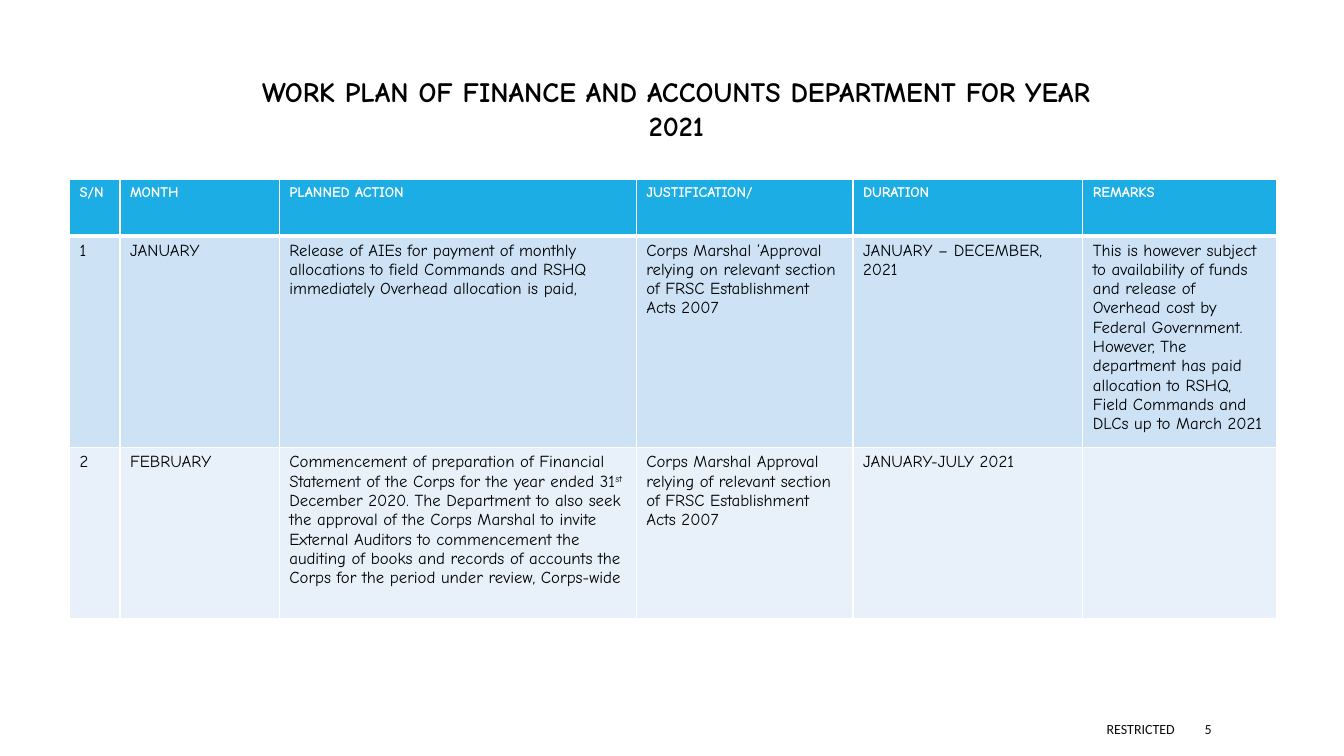
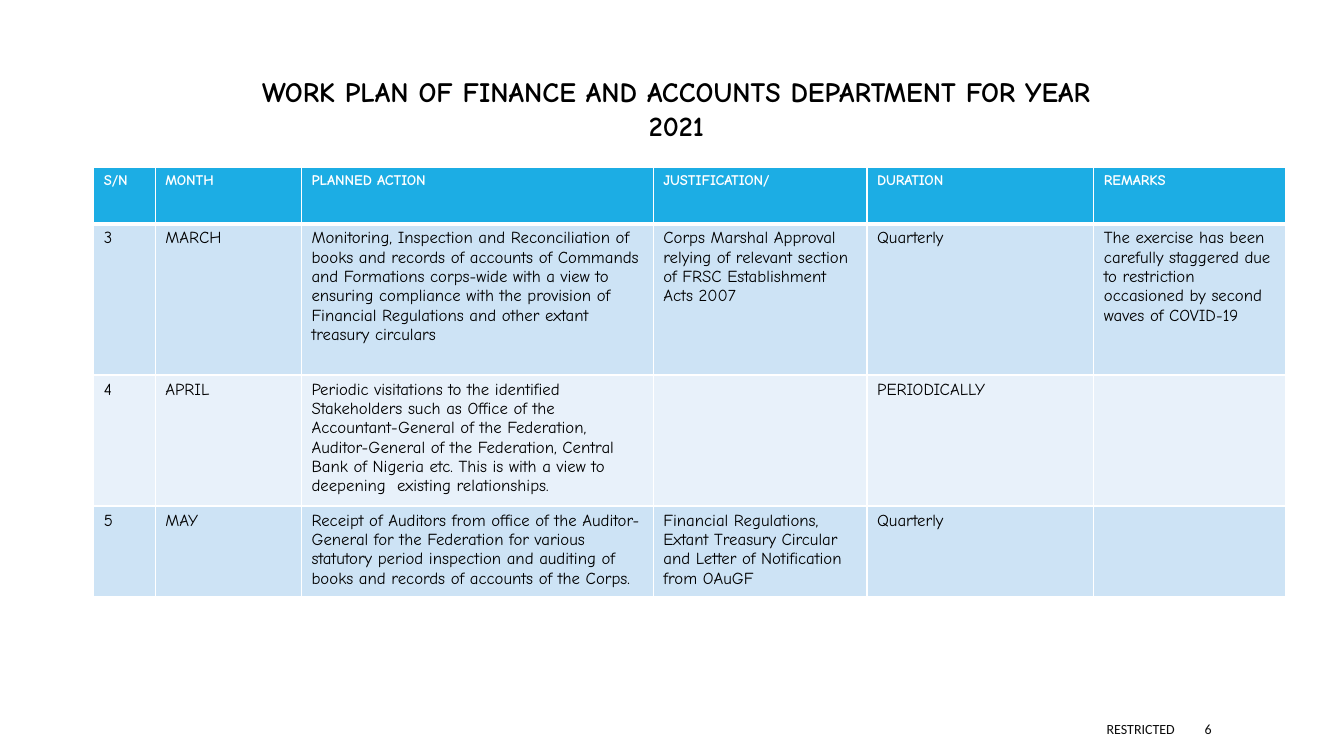
from lxml import etree
from pptx import Presentation
from pptx.dml.color import RGBColor
from pptx.enum import text as t
from pptx.oxml import ns
from pptx.util import Inches, Pt

BLACK = RGBColor(0x00, 0x00, 0x00)
WHITE = RGBColor(0xFF, 0xFF, 0xFF)
INK = RGBColor(0x0D, 0x0D, 0x0D)
BLUE = RGBColor(0x1C, 0xAD, 0xE4)
BANDS = [RGBColor(0xCD, 0xE3, 0xF5), RGBColor(0xE8, 0xF1, 0xFA)]

TITLE = "WORK PLAN OF FINANCE AND ACCOUNTS DEPARTMENT FOR YEAR 2021"
HEADS = ["S/N", "MONTH", "PLANNED ACTION", "JUSTIFICATION/", "DURATION", "REMARKS"]
BASIS = "Corps Marshal Approval relying of relevant section of FRSC Establishment Acts 2007"

PLANS = [
    {
        "page": "5",
        "at": (0.69, 1.78),
        "cols": [0.5, 1.58, 3.54, 2.15, 2.28, 1.92],
        "high": [0.56, 2.1, 1.7],
        "rows": [
            ["1", "JANUARY",
             "Release of AIEs for payment of monthly allocations to field Commands "
             "and RSHQ immediately Overhead allocation is paid,",
             "Corps Marshal ‘Approval relying on relevant section of FRSC "
             "Establishment Acts 2007",
             "JANUARY – DECEMBER, 2021",
             "This is however subject to availability of funds and release of "
             "Overhead cost by Federal Government. However, The department has paid "
             "allocation to RSHQ, Field Commands and DLCs up to March 2021"],
            ["2", "FEBRUARY",
             "Commencement of preparation of Financial Statement of the Corps for "
             "the year ended 31^st^ December 2020. The Department to also seek the "
             "approval of the Corps Marshal to invite External Auditors to "
             "commencement the auditing of books and records of accounts the Corps "
             "for the period under review, Corps-wide",
             BASIS, "JANUARY-JULY 2021", ""],
        ],
    },
    {
        "page": "6",
        "at": (0.93, 1.66),
        "cols": [0.61, 1.45, 3.49, 2.12, 2.25, 1.9],
        "high": [0.56, 1.5, 1.3, 0.9],
        "rows": [
            ["3", "MARCH",
             "Monitoring, Inspection and Reconciliation of books and records of "
             "accounts of Commands and Formations corps-wide with a view to ensuring "
             "compliance with the provision of Financial Regulations and other "
             "extant treasury circulars",
             BASIS, "Quarterly",
             "The exercise has been carefully staggered due to restriction "
             "occasioned by second waves of COVID-19"],
            ["4", "APRIL",
             "Periodic visitations to the identified Stakeholders such as Office of "
             "the Accountant-General of the Federation, Auditor-General of the "
             "Federation, Central Bank of Nigeria etc. This is with a view to "
             "deepening  existing relationships.",
             "", "PERIODICALLY", ""],
            ["5", "MAY",
             "Receipt of Auditors from office of the Auditor-General for the "
             "Federation for various statutory period inspection and auditing of "
             "books and records of accounts of the Corps.",
             "Financial Regulations, Extant Treasury Circular and Letter of "
             "Notification from OAuGF",
             "Quarterly", ""],
        ],
    },
]


def put(frame, words, size=12, color=BLACK, bold=False, font="Comic Neue",
        align=t.PP_ALIGN.LEFT, anchor=t.MSO_ANCHOR.TOP):
    """Fill a text frame; words between ^ marks are raised."""
    frame.word_wrap = True
    frame.vertical_anchor = anchor
    para = frame.paragraphs[0]
    para.alignment = align
    for i, part in enumerate(words.split("^") if words else []):
        run = para.add_run()
        run.text = part
        run.font.name = font
        run.font.size = Pt(size)
        run.font.bold = bold
        run.font.color.rgb = color
        if i % 2:
            run.font._rPr.set("baseline", "30000")


def edge(cell, **widths):
    """Draw white cell borders, widths in points by side."""
    props = cell._tc.get_or_add_tcPr()
    for side, width in widths.items():
        line = etree.SubElement(props, ns.qn("a:ln" + side), w=str(Pt(width)))
        fill = etree.SubElement(line, ns.qn("a:solidFill"))
        etree.SubElement(fill, ns.qn("a:srgbClr"), val=str(WHITE))


deck = Presentation()
deck.slide_width = Inches(13.33)
deck.slide_height = Inches(7.5)

for plan in PLANS:
    slide = deck.slides.add_slide(deck.slide_layouts[6])
    foot = {"size": 10, "color": INK, "font": "Calibri", "anchor": t.MSO_ANCHOR.MIDDLE}
    boxes = [
        ((2.28, 0.69, 8.86, 0.77), TITLE,
         {"size": 20, "bold": True, "align": t.PP_ALIGN.CENTER}),
        ((5.3, 7.08, 6.45, 0.3), "RESTRICTED", {**foot, "align": t.PP_ALIGN.RIGHT}),
        ((11.85, 7.08, 1.06, 0.3), plan["page"], foot),
    ]
    for place, words, style in boxes:
        box = slide.shapes.add_textbox(*map(Inches, place))
        put(box.text_frame, words, **style)

    rows = [HEADS] + plan["rows"]
    size = sum(plan["cols"]), sum(plan["high"])
    grid = slide.shapes.add_table(
        len(rows), len(HEADS), *map(Inches, plan["at"] + size)).table
    grid.horz_banding = False
    for col, width in zip(grid.columns, plan["cols"]):
        col.width = Inches(width)
    for r, row in enumerate(rows):
        grid.rows[r].height = Inches(plan["high"][r])
        for c, words in enumerate(row):
            cell = grid.cell(r, c)
            edge(cell, L=1, R=1, T=3 if r == 1 else 1, B=3 if r == 0 else 1)
            cell.fill.solid()
            if r == 0:
                cell.fill.fore_color.rgb = BLUE
                put(cell.text_frame, words, size=10.5, color=WHITE, bold=True)
            else:
                cell.fill.fore_color.rgb = BANDS[(r - 1) % 2]
                put(cell.text_frame, words)

deck.save("out.pptx")
